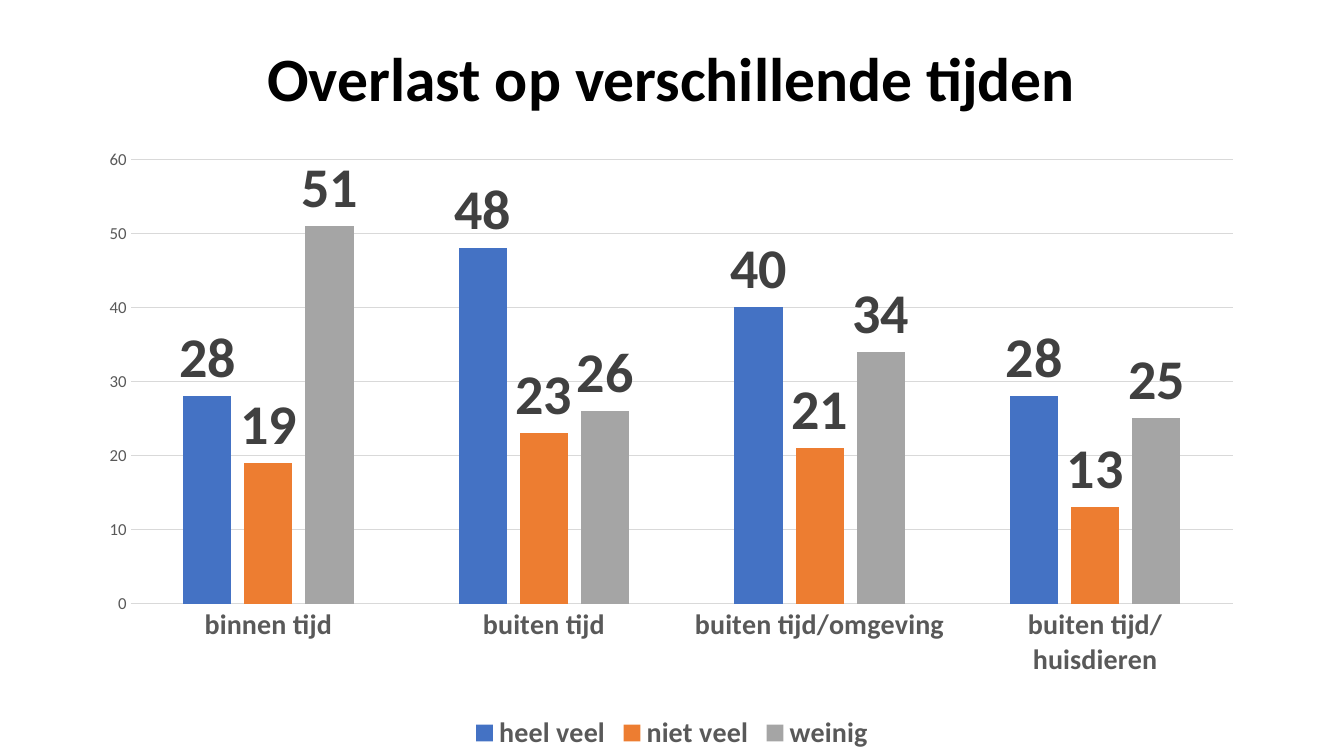
import pptx
import pptx.chart.data
import pptx.dml.color
import pptx.enum.chart
import pptx.enum.text
import pptx.oxml
import pptx.oxml.ns
import pptx.util
from dataclasses import dataclass

Pt = pptx.util.Pt
chart_enum = pptx.enum.chart


@dataclass(frozen=True)
class Theme:
    font: str = "Calibri"
    title: str = "000000"
    text: str = "595959"
    label: str = "404040"
    grid: str = "D9D9D9"
    series: tuple = ("4472C4", "ED7D31", "A5A5A5")
    title_size: int = 44
    label_size: int = 40
    category_size: int = 20
    scale_size: int = 12
    line_width: float = 0.75


THEME = Theme()
TIMES = ["binnen tijd", "buiten tijd", "buiten tijd/omgeving", "buiten tijd/ huisdieren"]
NUISANCE = {
    "heel veel": (28, 48, 40, 28),
    "niet veel": (19, 23, 21, 13),
    "weinig": (51, 26, 34, 25),
}
# Inner plot area as fractions of the chart
PLOT_AREA = {"x": 0.033, "y": 0.017, "w": 0.951, "h": 0.732}


def rgb(colour):
    return pptx.dml.color.RGBColor.from_string(colour)


def apply(target, values):
    for name, value in values.items():
        setattr(target, name, value)


def style_font(font, size, colour, bold=True):
    apply(font, {"name": THEME.font, "size": Pt(size), "bold": bold})
    font.color.rgb = rgb(colour)


def style_line(line):
    line.color.rgb = rgb(THEME.grid)
    line.width = Pt(THEME.line_width)


def add_title(slide, left, top, width, height):
    frame = slide.shapes.add_textbox(Pt(left), Pt(top), Pt(width), Pt(height)).text_frame
    apply(frame, {"word_wrap": True,
                  "vertical_anchor": pptx.enum.text.MSO_ANCHOR.MIDDLE})
    heading = frame.paragraphs[0]
    apply(heading, {"alignment": pptx.enum.text.PP_ALIGN.CENTER, "line_spacing": 0.9})
    run = heading.add_run()
    run.text = "Overlast op verschillende tijden"
    style_font(run.font, THEME.title_size, THEME.title)


def fix_plot_area(chart):
    plot_area = chart.element.find(".//" + pptx.oxml.ns.qn("c:plotArea"))
    for layout in plot_area.findall(pptx.oxml.ns.qn("c:layout")):
        plot_area.remove(layout)
    modes = '<c:xMode val="edge"/><c:yMode val="edge"/>'
    sizes = "".join(f'<c:{side} val="{part}"/>' for side, part in PLOT_AREA.items())
    plot_area.insert(0, pptx.oxml.parse_xml(
        f'<c:layout {pptx.oxml.ns.nsdecls("c")}><c:manualLayout>'
        f'<c:layoutTarget val="inner"/>{modes}{sizes}</c:manualLayout></c:layout>'))


def add_nuisance_chart(slide, left, top, width, height):
    data = pptx.chart.data.CategoryChartData()
    data.categories = TIMES
    for amount, values in NUISANCE.items():
        data.add_series(amount, values)
    chart = slide.shapes.add_chart(
        chart_enum.XL_CHART_TYPE.COLUMN_CLUSTERED,
        Pt(left), Pt(top), Pt(width), Pt(height), data).chart
    apply(chart, {"has_title": False, "has_legend": True})
    style_font(chart.font, 10, THEME.title, False)
    fix_plot_area(chart)

    # Columns and their values
    columns = chart.plots[0]
    apply(columns, {"gap_width": 219, "overlap": -27, "vary_by_categories": False})
    for series, colour in zip(columns.series, THEME.series):
        series.format.fill.solid()
        series.format.fill.fore_color.rgb = rgb(colour)
        series.invert_if_negative = False
        labels = series.data_labels
        apply(labels, {"show_value": True,
                       "position": chart_enum.XL_LABEL_POSITION.OUTSIDE_END})
        style_font(labels.font, THEME.label_size, THEME.label)

    # Axes
    times, scale = chart.category_axis, chart.value_axis
    for axis in (times, scale):
        apply(axis, {"major_tick_mark": chart_enum.XL_TICK_MARK.NONE,
                     "minor_tick_mark": chart_enum.XL_TICK_MARK.NONE})
    style_font(times.tick_labels.font, THEME.category_size, THEME.text)
    style_line(times.format.line)
    apply(scale, {"minimum_scale": 0, "maximum_scale": 60, "major_unit": 10,
                  "has_major_gridlines": True})
    style_font(scale.tick_labels.font, THEME.scale_size, THEME.text, False)
    style_line(scale.major_gridlines.format.line)
    scale.format.line.fill.background()

    # Legend
    apply(chart.legend, {"position": chart_enum.XL_LEGEND_POSITION.BOTTOM,
                         "include_in_layout": False})
    style_font(chart.legend.font, THEME.category_size, THEME.text)


def main():
    deck = pptx.Presentation()
    apply(deck, {"slide_width": Pt(960), "slide_height": Pt(540)})
    slide = deck.slides.add_slide(deck.slide_layouts[6])
    margin, content_width = 66, 828
    add_title(slide, margin, 28.75, content_width, 59)
    add_nuisance_chart(slide, margin, 106.5, content_width, 433.5)
    deck.save("out.pptx")


if __name__ == "__main__":
    main()
